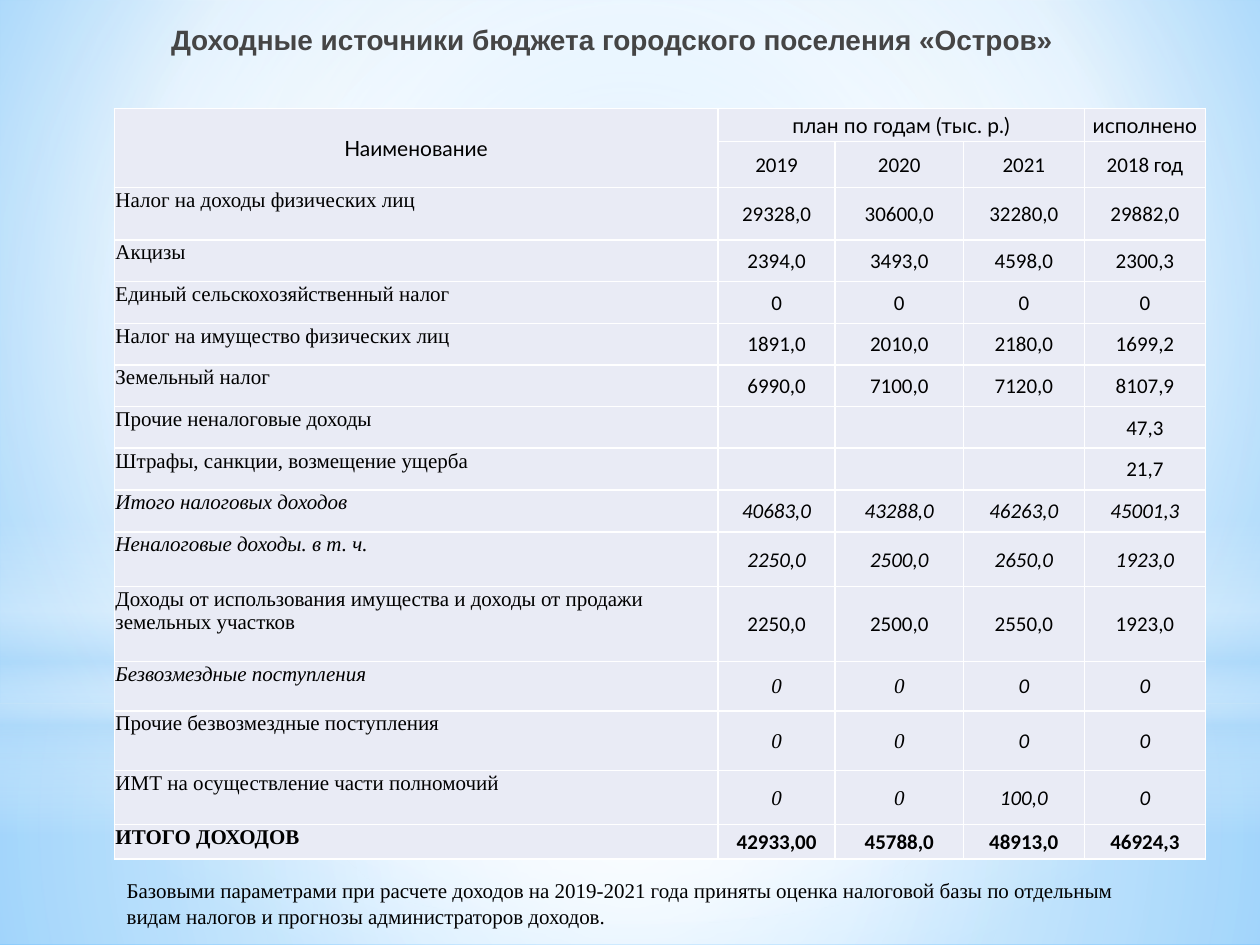
from pptx import Presentation
from pptx.dml.color import RGBColor
from pptx.enum.shapes import MSO_SHAPE
from pptx.enum.text import MSO_ANCHOR, PP_ALIGN
from pptx.oxml import parse_xml
from pptx.oxml.ns import nsdecls, qn
from pptx.util import Pt

LEFT, CENTER = PP_ALIGN.LEFT, PP_ALIGN.CENTER
TOP, MIDDLE = MSO_ANCHOR.TOP, MSO_ANCHOR.MIDDLE
RECTANGLE, OVAL = MSO_SHAPE.RECTANGLE, MSO_SHAPE.OVAL
SERIF, SANS, HEADER, TITLE = "Times New Roman", "Calibri", "Lato", "Arial"
COLORS = {"text": "000000", "title": "454545", "cell": "E9EBF5", "border": "FFFFFF",
          "white": "FFFFFF", "pale": "B4DCFA", "sky": "9ED5FF", "blue": "5BB9FF"}

TITLE_TEXT = "Доходные источники бюджета городского поселения «Остров»"
NOTE_TEXT = ("Базовыми параметрами при расчете доходов на 2019-2021 года приняты оценка "
             "налоговой базы по отдельным видам налогов и прогнозы администраторов доходов.")

BACKGROUND = [(0, "sky", 100), (60, "white", 100), (100, "blue", 100)]
CENTERED = (50, 50, 50, 50)
GLOWS = [
    (RECTANGLE, 402, 138, [(0, "white", 91), (37, "white", 76), (100, "pale", 79)], CENTERED),
    (RECTANGLE, 0, 402, [(0, "white", 89), (48, "white", 62), (100, "pale", 79)], CENTERED),
    (RECTANGLE, 297, 180, [(0, "white", 0), (29, "white", 30), (45, "pale", 40),
                           (55, "white", 26), (65, "pale", 60), (100, "white", 0)], None),
    (OVAL, 126, 402, [(0, "white", 100), (56, "white", 0)], CENTERED),
]

COLUMN_WIDTHS = [345, 67, 73.2, 69.2, 69.2]
HEADER_HEIGHTS = [19, 26.2]
GROUPS = [(0, 0, 1, 0, "Наименование"), (0, 1, 0, 3, "план по годам (тыс. р.)"),
          (0, 4, 0, 4, "исполнено")]
YEARS = ["2019", "2020", "2021", "2018 год"]
PLAIN, ITALIC, BOLD = {}, {"italic": True}, {"bold": True}
ROWS = [
    (30, "Налог на доходы физических лиц", PLAIN, ["29328,0", "30600,0", "32280,0", "29882,0"], PLAIN),
    (23.8, "Акцизы", PLAIN, ["2394,0", "3493,0", "4598,0", "2300,3"], PLAIN),
    (23.8, "Единый сельскохозяйственный налог", PLAIN, ["0", "0", "0", "0"], PLAIN),
    (23.8, "Налог на имущество физических лиц", PLAIN, ["1891,0", "2010,0", "2180,0", "1699,2"], PLAIN),
    (23.8, "Земельный налог", PLAIN, ["6990,0", "7100,0", "7120,0", "8107,9"], PLAIN),
    (23.8, "Прочие неналоговые доходы", PLAIN, ["", "", "", "47,3"], PLAIN),
    (23.8, "Штрафы, санкции, возмещение ущерба", PLAIN, ["", "", "", "21,7"], PLAIN),
    (24.2, "Итого налоговых доходов", ITALIC, ["40683,0", "43288,0", "46263,0", "45001,3"], ITALIC),
    (31.2, "Неналоговые доходы. в т. ч.", ITALIC, ["2250,0", "2500,0", "2650,0", "1923,0"], ITALIC),
    (42.8, "Доходы от использования имущества и доходы от продажи земельных участков", PLAIN,
     ["2250,0", "2500,0", "2550,0", "1923,0"], PLAIN),
    (28.2, "Безвозмездные поступления", ITALIC, ["0", "0", "0", "0"], ITALIC),
    (34, "Прочие безвозмездные поступления", PLAIN, ["0", "0", "0", "0"], ITALIC),
    (31, "ИМТ на осуществление части полномочий", PLAIN, ["0", "0", "100,0", "0"], ITALIC),
    (19.8, "ИТОГО ДОХОДОВ", BOLD, ["42933,00", "45788,0", "48913,0", "46924,3"], BOLD),
]
SERIF_ZERO_ROWS = range(10, 13)
SERIF_ZERO_COLUMNS = range(1, 3)


def write(frame, text, font=SERIF, size=12, color="text", align=LEFT, bold=False, italic=False):
    para = frame.paragraphs[0]
    para.alignment = align
    if text:
        span = para.add_run()
        span.text = text
        span.font.name, span.font.size = font, Pt(size)
        span.font.bold, span.font.italic = bold, italic
        span.font.color.rgb = RGBColor.from_string(COLORS[color])


def paint_gradient(fill, element, stops, focus):
    fill.gradient()
    marks = "".join(
        f'<a:gs pos="{place * 1000}"><a:srgbClr val="{COLORS[color]}">'
        f'<a:alpha val="{opacity * 1000}"/></a:srgbClr></a:gs>'
        for place, color, opacity in stops)
    if focus:
        sides = " ".join(f'{side}="{value * 1000}"' for side, value in zip("ltrb", focus))
        shade = f'<a:path path="circle"><a:fillToRect {sides}/></a:path>'
    else:
        shade = '<a:lin ang="5400000" scaled="0"/>'
    old = next(element.iter(qn("a:gradFill")))
    old.getparent().replace(old, parse_xml(
        f'<a:gradFill {nsdecls("a")} rotWithShape="1"><a:gsLst>{marks}</a:gsLst>{shade}</a:gradFill>'))


def style_cell(cell):
    properties = cell._tc.get_or_add_tcPr()
    for side in ("lnL", "lnR", "lnT", "lnB"):
        properties.append(parse_xml(
            f'<a:{side} {nsdecls("a")} w="12700"><a:solidFill>'
            f'<a:srgbClr val="{COLORS["border"]}"/></a:solidFill></a:{side}>'))
    cell.fill.solid()
    cell.fill.fore_color.rgb = RGBColor.from_string(COLORS["cell"])
    cell.margin_left = cell.margin_right = cell.margin_top = Pt(0.7)
    cell.margin_bottom = 0


def fill_cell(cell, text, anchor=MIDDLE, align=CENTER, **style):
    cell.vertical_anchor = anchor
    write(cell.text_frame, text, align=align, **style)


def add_text(page, left, top, width, height, text, margin_top=3.6, **style):
    box = page.shapes.add_textbox(Pt(left), Pt(top), Pt(width), Pt(height))
    box.text_frame.word_wrap = True
    box.text_frame.margin_top = Pt(margin_top)
    write(box.text_frame, text, **style)


def add_backdrop(page):
    paint_gradient(page.background.fill, page._element, BACKGROUND, (20, 10, 20, 60))
    for kind, top, height, stops, focus in GLOWS:
        glow = page.shapes.add_shape(kind, 0, Pt(top), Pt(720), Pt(height))
        glow.shadow.inherit = False
        glow.line.fill.background()
        paint_gradient(glow.fill, glow._element, stops, focus)


def add_income_table(page):
    heights = HEADER_HEIGHTS + [row[0] for row in ROWS]
    table = page.shapes.add_table(len(heights), len(COLUMN_WIDTHS), Pt(65.3), Pt(62),
                                  Pt(sum(COLUMN_WIDTHS)), Pt(sum(heights))).table
    table.horz_banding = table.first_row = False
    for column, width in zip(table.columns, COLUMN_WIDTHS):
        column.width = Pt(width)
    for row, height in zip(table.rows, heights):
        row.height = Pt(height)
    for cell in table.iter_cells():
        style_cell(cell)
    for top, left, bottom, right, text in GROUPS:
        cell = table.cell(top, left)
        if (top, left) != (bottom, right):
            cell.merge(table.cell(bottom, right))
        fill_cell(cell, text, font=HEADER)
    for column, year in enumerate(YEARS, 1):
        fill_cell(table.cell(1, column), year, font=SANS)
    for index, (_, label, label_style, values, value_style) in enumerate(ROWS):
        row = index + len(HEADER_HEIGHTS)
        fill_cell(table.cell(row, 0), label, anchor=TOP, align=LEFT, **label_style)
        for column, value in enumerate(values, 1):
            serif = index in SERIF_ZERO_ROWS and column in SERIF_ZERO_COLUMNS
            fill_cell(table.cell(row, column), value, font=SERIF if serif else SANS, **value_style)


def main():
    deck = Presentation()
    deck.slide_width, deck.slide_height = Pt(720), Pt(540)
    page = deck.slides.add_slide(deck.slide_layouts[6])
    add_backdrop(page)
    add_text(page, 87, 9.4, 525.6, 52.6, TITLE_TEXT,
             font=TITLE, size=16, color="title", align=CENTER, bold=True)
    add_income_table(page)
    add_text(page, 65.3, 468.7, 584, 65.5, NOTE_TEXT, margin_top=33)
    deck.save("out.pptx")


if __name__ == "__main__":
    main()
